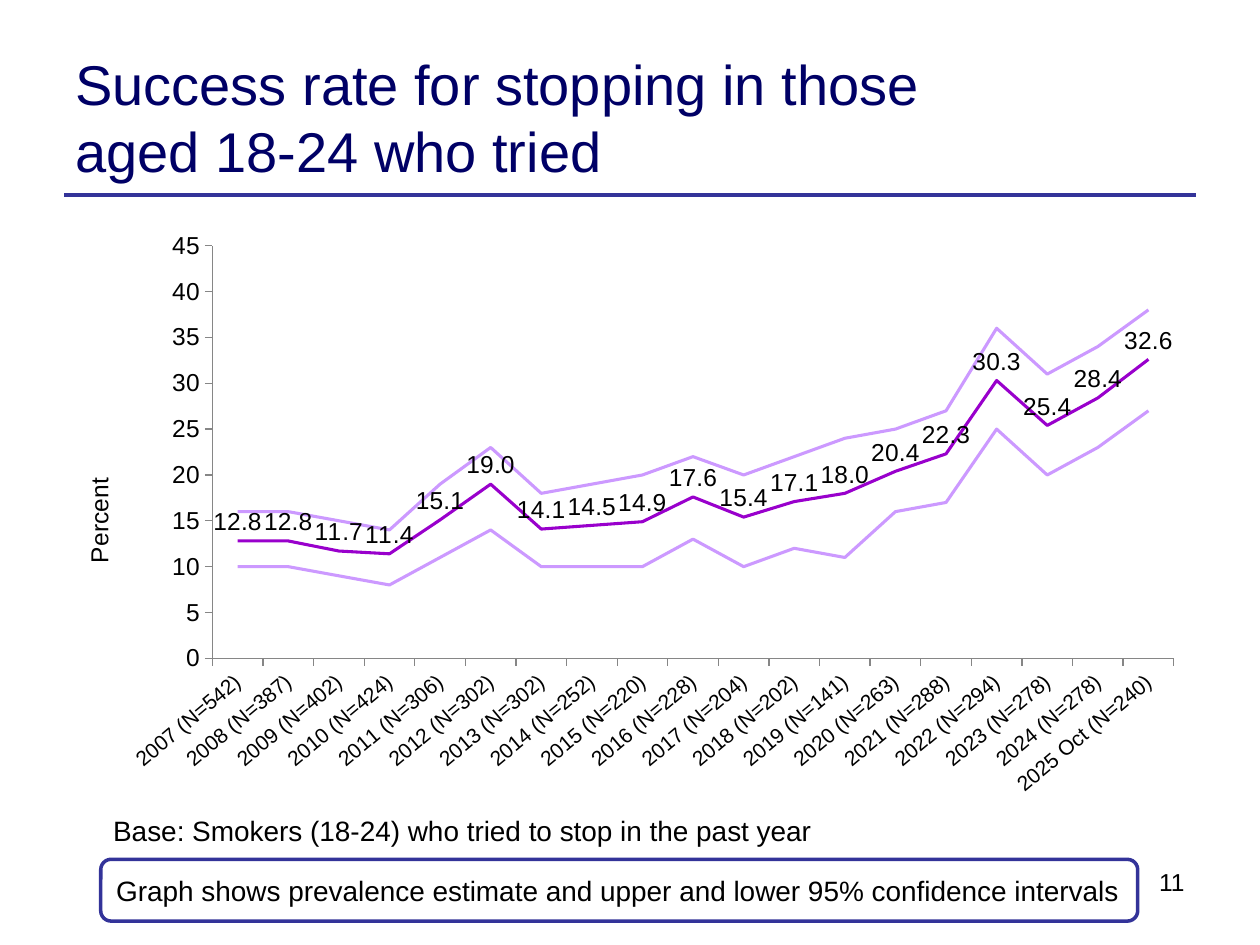
from lxml import etree
from pptx import Presentation
from pptx.chart.data import CategoryChartData
from pptx.dml.color import RGBColor
from pptx.enum import chart as ch, shapes, text
from pptx.oxml import parse_xml
from pptx.oxml.ns import nsdecls, qn
from pptx.util import Inches, Pt

NAVY = RGBColor(0x00, 0x00, 0x66)
BLUE = RGBColor(0x33, 0x33, 0x99)
PURPLE = RGBColor(0x99, 0x00, 0xCC)
LILAC = RGBColor(0xCC, 0x99, 0xFF)
GREY = RGBColor(0x86, 0x86, 0x86)
BLACK = RGBColor(0x00, 0x00, 0x00)
WHITE = RGBColor(0xFF, 0xFF, 0xFF)
FONT = "Arial"

SAMPLE_SIZES = [542, 387, 402, 424, 306, 302, 302, 252, 220, 228,
                204, 202, 141, 263, 288, 294, 278, 278, 240]
ESTIMATE = [12.8, 12.8, 11.7, 11.4, 15.1, 19, 14.1, 14.5, 14.9, 17.6,
            15.4, 17.1, 18, 20.4, 22.3, 30.3, 25.4, 28.4, 32.6]
UPPER = [16, 16, 15, 14, 19, 23, 18, 19, 20, 22,
         20, 22, 24, 25, 27, 36, 31, 34, 38]
LOWER = [10, 10, 9, 8, 11, 14, 10, 10, 10, 13,
         10, 12, 11, 16, 17, 25, 20, 23, 27]
SERIES = [("Estimate", ESTIMATE, PURPLE),
          ("Upper 95% CI", UPPER, LILAC),
          ("Lower 95% CI", LOWER, LILAC)]


def style_font(font, size, color=BLACK):
    font.name = FONT
    font.size = Pt(size)
    font.bold = False
    font.color.rgb = color


def write(shape, words, size, color=BLACK, align=text.PP_ALIGN.LEFT,
          anchor=text.MSO_ANCHOR.TOP, wrap=True):
    frame = shape.text_frame
    frame.word_wrap = wrap
    frame.vertical_anchor = anchor
    paragraph = frame.paragraphs[0]
    paragraph.alignment = align
    run = paragraph.add_run()
    run.text = words
    style_font(run.font, size, color)


def add_text(slide, box, words, size, **style):
    write(slide.shapes.add_textbox(*map(Inches, box)), words, size, **style)


def add_rule(slide, left, right, y):
    rule = slide.shapes.add_connector(
        shapes.MSO_CONNECTOR.STRAIGHT,
        Inches(left), Inches(y), Inches(right), Inches(y))
    rule.line.color.rgb = BLUE
    rule.line.width = Pt(2.25)
    etree.SubElement(rule._element.spPr, qn("a:effectLst"))


def add_note(slide, box, words):
    note = slide.shapes.add_shape(
        shapes.MSO_SHAPE.ROUNDED_RECTANGLE, *map(Inches, box))
    note.shadow.inherit = False
    note.fill.solid()
    note.fill.fore_color.rgb = WHITE
    note.line.color.rgb = BLUE
    note.line.width = Pt(2)
    write(note, words, 16, anchor=text.MSO_ANCHOR.MIDDLE)


def layout_xml(target="", **fractions):
    modes = "".join(f'<c:{axis}Mode val="edge"/>' for axis in "xy")
    sizes = "".join(f'<c:{key} val="{value}"/>'
                    for key, value in fractions.items())
    return parse_xml(f'<c:layout {nsdecls("c")}><c:manualLayout>{target}'
                     f'{modes}{sizes}</c:manualLayout></c:layout>')


def place(parent, layout, index):
    for old in parent.findall(qn("c:layout")):
        parent.remove(old)
    parent.insert(index, layout)


def style_axis(axis, size):
    axis.has_major_gridlines = False
    axis.major_tick_mark = ch.XL_TICK_MARK.OUTSIDE
    axis.minor_tick_mark = ch.XL_TICK_MARK.NONE
    axis.format.line.color.rgb = GREY
    style_font(axis.tick_labels.font, size)


def style_series(series, color):
    series.smooth = False
    series.format.line.color.rgb = color
    series.format.line.width = Pt(1.75)
    series.marker.style = ch.XL_MARKER_STYLE.NONE


def add_success_chart(slide, box):
    data = CategoryChartData()
    years = [str(year) for year in range(2007, 2025)] + ["2025 Oct"]
    data.categories = [f"{year} (N={size})"
                       for year, size in zip(years, SAMPLE_SIZES)]
    for name, values, _ in SERIES:
        data.add_series(name, values)
    chart = slide.shapes.add_chart(
        ch.XL_CHART_TYPE.LINE, *map(Inches, box), data).chart
    chart.has_legend = False
    chart.has_title = False
    style_font(chart.font, 18)

    plot = chart.plots[0]
    plot.vary_by_categories = False
    for series, (_, _, color) in zip(plot.series, SERIES):
        style_series(series, color)

    labels = plot.series[0].data_labels
    labels.show_value = True
    labels.position = ch.XL_LABEL_POSITION.ABOVE
    labels.number_format = "#,##0.0"
    labels.number_format_is_linked = False
    style_font(labels.font, 14)

    years_axis, percent_axis = chart.category_axis, chart.value_axis
    style_axis(years_axis, 12)
    style_axis(percent_axis, 14)
    body = years_axis._element.find(qn("c:txPr")).find(qn("a:bodyPr"))
    body.set("rot", "-2400000")
    body.set("vert", "horz")
    percent_axis.minimum_scale = 0
    percent_axis.maximum_scale = 45
    percent_axis.major_unit = 5
    percent_axis.tick_labels.number_format = "0"
    percent_axis.tick_labels.number_format_is_linked = False

    title = percent_axis.axis_title
    heading = title.text_frame.paragraphs[0].add_run()
    heading.text = "Percent"
    style_font(heading.font, 14)
    place(title._element, layout_xml(x=0.03, y=0.43), 1)
    inner = '<c:layoutTarget val="inner"/>'
    place(chart._chartSpace.chart.plotArea,
          layout_xml(inner, x=0.146, y=0.043, w=0.834, h=0.703), 0)


def main():
    deck = Presentation()
    deck.slide_width, deck.slide_height = Inches(10), Inches(7.5)
    slide = deck.slides.add_slide(deck.slide_layouts[6])
    add_rule(slide, 0.51, 9.49, 1.55)
    add_text(slide, (0.5, 0.3, 7.89, 1.25),
             "Success rate for stopping in those aged 18-24 who tried", 32,
             color=NAVY, anchor=text.MSO_ANCHOR.MIDDLE)
    add_success_chart(slide, (0.35, 1.75, 9.15, 4.66))
    add_text(slide, (6.73, 6.83, 2.77, 0.52), "11", 14,
             align=text.PP_ALIGN.RIGHT)
    add_note(slide, (0.8, 6.82, 8.23, 0.49),
             "Graph shows prevalence estimate and upper and lower 95% "
             "confidence intervals")
    add_text(slide, (0.8, 6.41, 5.94, 0.37),
             "Base: Smokers (18-24) who tried to stop in the past year", 16,
             wrap=False)
    deck.save("out.pptx")


if __name__ == "__main__":
    main()
